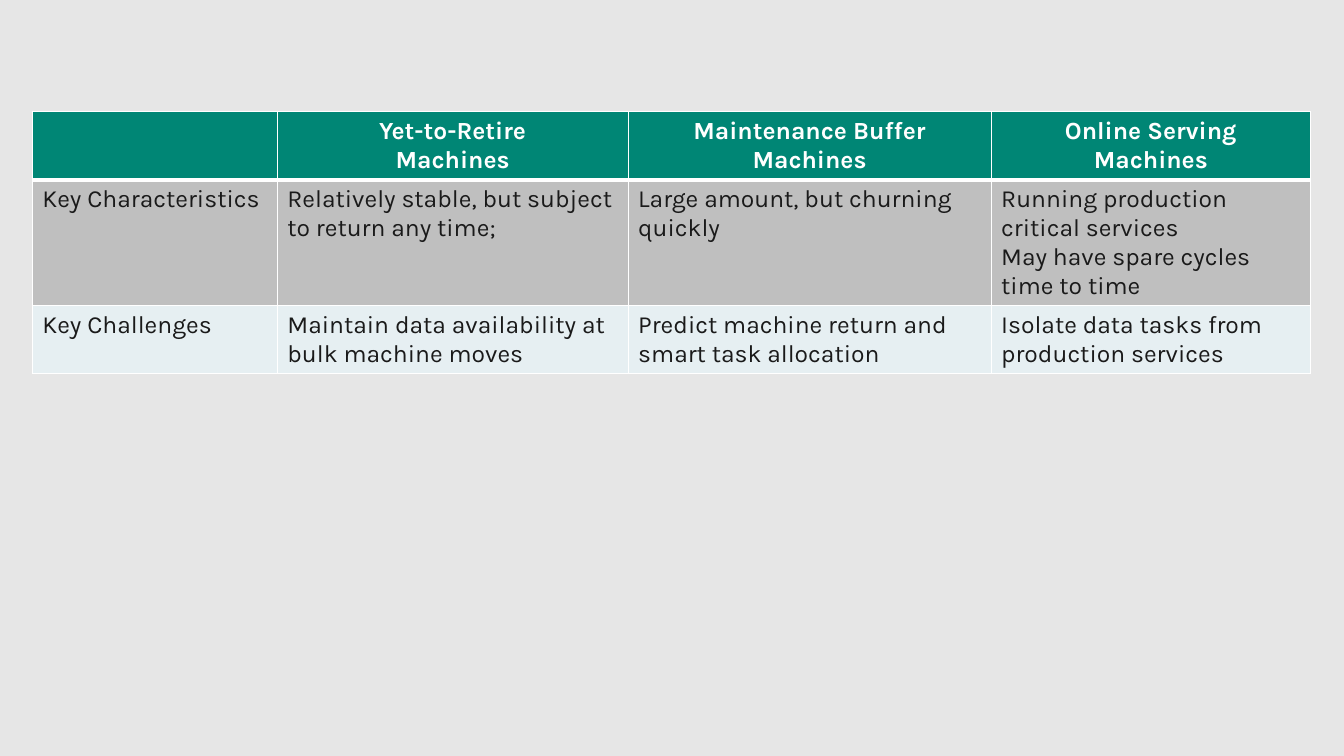
from lxml.etree import SubElement
from pptx import Presentation
from pptx.dml.color import RGBColor
from pptx.enum.text import PP_ALIGN
from pptx.oxml.ns import qn
from pptx.util import Inches, Pt

COLUMN_WIDTHS = [2.43, 3.48, 3.6, 3.17]
ROW_HEIGHTS = [0.67, 1.24, 0.67]
ROW_FILLS = ["008675", "BFBFBF", "E6EFF2"]
MACHINE_ROWS = [
    ["", "Yet-to-Retire\nMachines", "Maintenance Buffer\nMachines",
     "Online Serving\nMachines"],
    ["Key Characteristics",
     "Relatively stable, but subject to return any time;",
     "Large amount, but churning quickly",
     "Running production critical services\nMay have spare cycles time to time"],
    ["Key Challenges",
     "Maintain data availability at bulk machine moves",
     "Predict machine return and smart task allocation",
     "Isolate data tasks from production services"],
]


def color(hex_value):
    return RGBColor.from_string(hex_value)


class SlideBuilder:
    font_name = "Karla"
    font_size = Pt(17.6)
    white = "FFFFFF"
    dark = "1A1A1A"

    def __init__(self, presentation, background):
        self.slide = presentation.slides.add_slide(presentation.slide_layouts[6])
        fill = self.slide.background.fill
        fill.solid()
        fill.fore_color.rgb = color(background)

    def add_table(self, left, top, widths, heights, rows, fills):
        shape = self.slide.shapes.add_table(
            len(rows), len(widths), Inches(left), Inches(top),
            Inches(sum(widths)), Inches(sum(heights)))
        table = shape.table
        for column, width in zip(table.columns, widths):
            column.width = Inches(width)
        for row, height in zip(table.rows, heights):
            row.height = Inches(height)
        for row_index, texts in enumerate(rows):
            for column_index, text in enumerate(texts):
                cell = table.cell(row_index, column_index)
                self.style_borders(cell, row_index)
                cell.fill.solid()
                cell.fill.fore_color.rgb = color(fills[row_index])
                self.write_cell(cell, text, is_header=row_index == 0)

    def style_borders(self, cell, row_index):
        # The rule below the header is thicker than the other cell borders
        widths = {"L": 1, "R": 1, "T": 3 if row_index == 1 else 1,
                  "B": 3 if row_index == 0 else 1}
        properties = cell._tc.get_or_add_tcPr()
        for side, width in widths.items():
            line = SubElement(properties, qn(f"a:ln{side}"), w=str(Pt(width)))
            line_fill = SubElement(line, qn("a:solidFill"))
            SubElement(line_fill, qn("a:srgbClr"), val=self.white)

    def write_cell(self, cell, text, is_header):
        cell.text_frame.text = text
        for paragraph in cell.text_frame.paragraphs:
            paragraph.alignment = PP_ALIGN.CENTER if is_header else PP_ALIGN.LEFT
            for run in paragraph.runs:
                run.font.name = self.font_name
                run.font.size = self.font_size
                run.font.bold = is_header
                run.font.color.rgb = color(self.white if is_header else self.dark)


def main():
    presentation = Presentation()
    presentation.slide_width = Inches(13.33)
    presentation.slide_height = Inches(7.5)

    # Comparison of machine types
    builder = SlideBuilder(presentation, "E6E6E6")
    builder.add_table(0.32, 1.11, COLUMN_WIDTHS, ROW_HEIGHTS, MACHINE_ROWS, ROW_FILLS)

    presentation.save("out.pptx")


if __name__ == "__main__":
    main()
